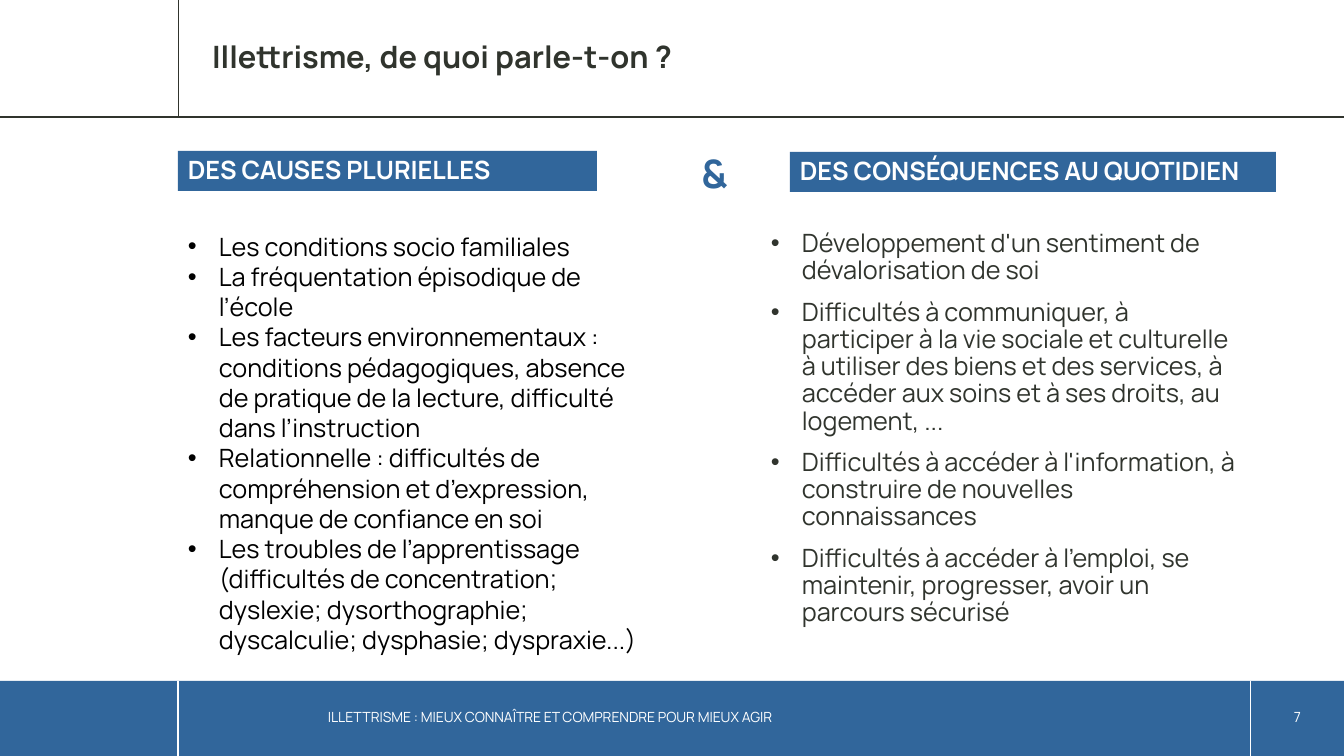
"""Build the slide on the causes and consequences of illiteracy."""
from dataclasses import dataclass

from lxml import etree
from pptx import Presentation
from pptx import util as u
from pptx.dml.color import RGBColor
from pptx.enum import shapes, text
from pptx.oxml import ns

BLUE = RGBColor(0x31, 0x66, 0x9B)
DARK = RGBColor(0x30, 0x34, 0x2D)
BLACK = RGBColor(0, 0, 0)
WHITE = RGBColor(255, 255, 255)
FONT = "Manrope"
WIDTH, HEIGHT = 1344, 756
HEAD, FOOT = 117, 681
LEFT, RIGHT = 178, 1251


@dataclass(frozen=True)
class Box:
    left: int
    top: int
    width: int
    height: int


@dataclass(frozen=True)
class Style:
    size: int
    color: RGBColor
    bold: bool = False
    align: text.PP_ALIGN = text.PP_ALIGN.LEFT
    line: float = 1.0
    gap: int = 0
    bullet: bool = False
    middle: bool = True


@dataclass(frozen=True)
class Rule:
    x1: int
    y1: int
    x2: int
    y2: int
    color: RGBColor


@dataclass(frozen=True)
class Label:
    box: Box
    style: Style
    lines: tuple[str, ...]


TITLE = Style(22, DARK, True, line=0.9)
BANNER = Style(18, WHITE, True, line=0.9)
SMALL = Style(10, WHITE)
PAGE = Style(10, WHITE, align=text.PP_ALIGN.CENTER)
SIGN = Style(28, BLUE, True, text.PP_ALIGN.CENTER, middle=False)
CAUSE = Style(18, BLACK, bullet=True, middle=False)
EFFECT = Style(18, DARK, line=0.9, gap=10, bullet=True, middle=False)

RULES = (
    Rule(0, FOOT - 1, WIDTH, FOOT - 1, WHITE),
    Rule(LEFT, FOOT, LEFT, HEIGHT, WHITE),
    Rule(RIGHT, FOOT, RIGHT, HEIGHT, WHITE),
    Rule(0, HEAD, WIDTH, HEAD, DARK),
    Rule(LEFT + 1, 0, LEFT + 1, HEAD, DARK),
)

BANNERS = (
    Label(Box(LEFT, 151, 419, 40), BANNER, ("DES CAUSES PLURIELLES",)),
    Label(Box(790, 152, 486, 40), BANNER, ("DES CONSÉQUENCES AU QUOTIDIEN",)),
)

TEXTS = (
    Label(Box(668, 144, 93, 57), SIGN, ("&",)),
    Label(Box(LEFT, 226, 486, 437), CAUSE, (
        "Les conditions socio familiales",
        "La fréquentation épisodique de l’école",
        "Les facteurs environnementaux : conditions pédagogiques, absence "
        "de pratique de la lecture, difficulté dans l’instruction",
        "Relationnelle : difficultés de compréhension et d’expression, "
        "manque de confiance en soi",
        "Les troubles de l’apprentissage (difficultés de concentration; "
        "dyslexie; dysorthographie; dyscalculie; dysphasie; dyspraxie...)",
    )),
    Label(Box(761, 226, 494, 405), EFFECT, (
        "Développement d'un sentiment de dévalorisation de soi",
        "Difficultés à communiquer, à participer à la vie sociale et "
        "culturelle à utiliser des biens et des services, à accéder aux "
        "soins et à ses droits, au logement, ...",
        "Difficultés à accéder à l'information, à construire de nouvelles "
        "connaissances",
        "Difficultés à accéder à l'emploi, se maintenir, progresser, avoir "
        "un parcours sécurisé",
    )),
    Label(Box(318, 697, 913, 40), SMALL,
          ("ILLETTRISME : MIEUX CONNAÎTRE ET COMPRENDRE POUR MIEUX AGIR",)),
    Label(Box(RIGHT, 697, 93, 40), PAGE, ("7",)),
)


def px(n: int) -> u.Emu:
    return u.Emu(round(n * 914400 / 100.8))


def place(box: Box) -> tuple[u.Emu, ...]:
    return px(box.left), px(box.top), px(box.width), px(box.height)


def add_bullet(para, color: RGBColor) -> None:
    props = para._p.get_or_add_pPr()
    props.set("marL", str(px(31)))
    props.set("indent", str(-px(31)))
    tint = etree.SubElement(props, ns.qn("a:buClr"))
    etree.SubElement(tint, ns.qn("a:srgbClr")).set("val", str(color))
    etree.SubElement(props, ns.qn("a:buFont")).set("typeface", "Arial")
    etree.SubElement(props, ns.qn("a:buChar")).set("char", "•")


def write(frame, style: Style, lines: tuple[str, ...]) -> None:
    frame.word_wrap = True
    frame.auto_size = text.MSO_AUTO_SIZE.NONE
    frame.vertical_anchor = (text.MSO_ANCHOR.MIDDLE if style.middle
                             else text.MSO_ANCHOR.TOP)
    for i, line in enumerate(lines):
        para = frame.add_paragraph() if i else frame.paragraphs[0]
        para.text = line
        para.alignment = style.align
        para.line_spacing = style.line
        if i and style.gap:
            para.space_before = u.Pt(style.gap)
        if style.bullet:
            add_bullet(para, style.color)
        font = para.font
        font.name, font.size, font.bold = FONT, u.Pt(style.size), style.bold
        font.color.rgb = style.color


def add_block(slide, box: Box):
    block = slide.shapes.add_shape(shapes.MSO_SHAPE.RECTANGLE, *place(box))
    block.shadow.inherit = False
    block.fill.solid()
    block.fill.fore_color.rgb = BLUE
    block.line.fill.background()
    return block


def add_rule(slide, rule: Rule) -> None:
    line = slide.shapes.add_connector(
        shapes.MSO_CONNECTOR.STRAIGHT,
        px(rule.x1), px(rule.y1), px(rule.x2), px(rule.y2))
    line.line.color.rgb = rule.color
    line.line.width = u.Pt(0.75)
    etree.SubElement(line._element.spPr, ns.qn("a:effectLst"))


def main() -> None:
    deck = Presentation()
    deck.slide_width, deck.slide_height = px(WIDTH), px(HEIGHT)
    slide = deck.slides.add_slide(deck.slide_layouts[5])
    title = slide.shapes.title
    title.left, title.top, title.width, title.height = place(
        Box(202, 1, 1064, 116))
    write(title.text_frame, TITLE, ("Illettrisme, de quoi parle-t-on ?",))
    add_block(slide, Box(0, FOOT, WIDTH, HEIGHT - FOOT))
    for rule in RULES:
        add_rule(slide, rule)
    for item in BANNERS:
        block = add_block(slide, item.box)
        write(block.text_frame, item.style, item.lines)
    for item in TEXTS:
        area = slide.shapes.add_textbox(*place(item.box))
        write(area.text_frame, item.style, item.lines)
    deck.save("out.pptx")


if __name__ == "__main__":
    main()
